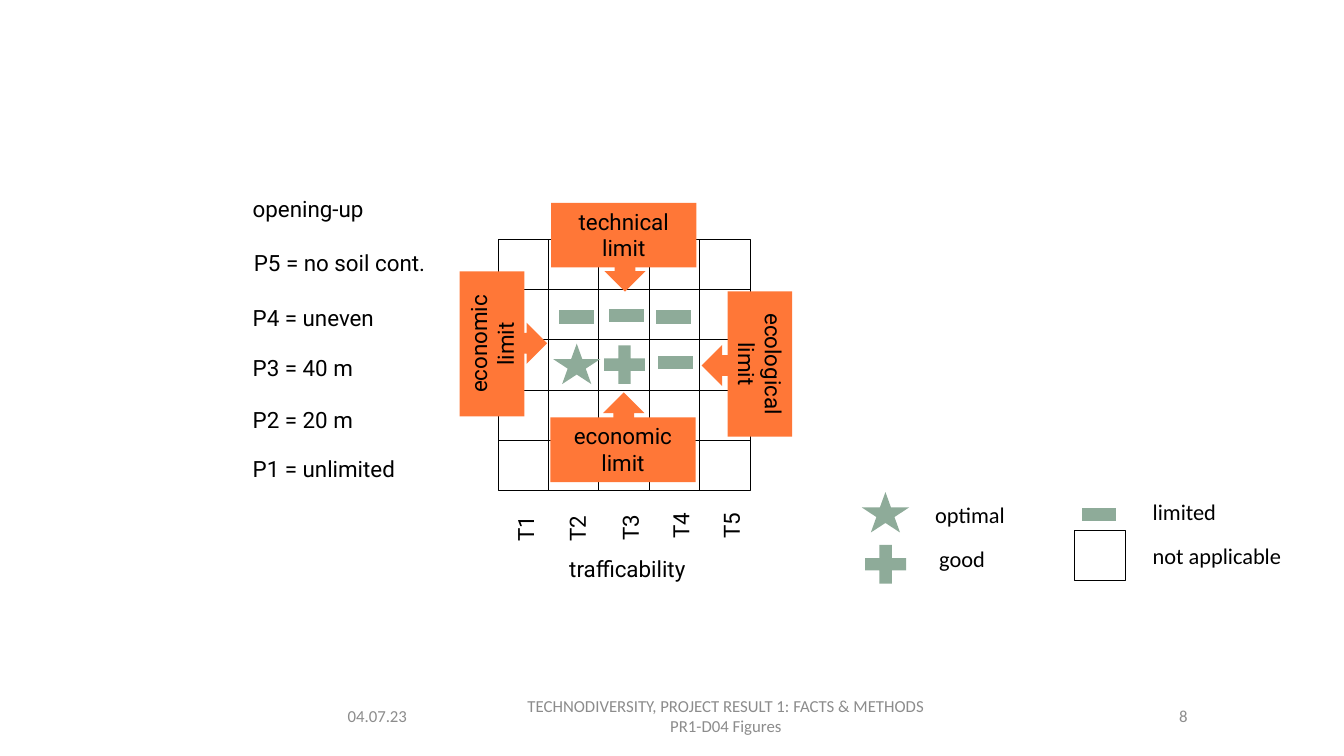
from dataclasses import dataclass

from pptx import Presentation
from pptx.dml.color import RGBColor
from pptx.enum.shapes import MSO_SHAPE as Shape
from pptx.enum.text import MSO_ANCHOR as Anchor, PP_ALIGN as Align
from pptx.util import Cm, Pt


@dataclass(frozen=True)
class Theme:
    ink: RGBColor = RGBColor(0x00, 0x00, 0x00)
    muted: RGBColor = RGBColor(0x8C, 0x8C, 0x8C)
    limit: RGBColor = RGBColor(0xFF, 0x77, 0x37)
    rating: RGBColor = RGBColor(0x8E, 0xAB, 0x99)
    figure_font: str = "Roboto"
    plain_font: str = "Calibri"
    body: float = 16
    small: float = 12
    hairline: float = 0.5


CELL = 1.27
GRID_LEFT, GRID_TOP, GRID_SIZE = 12.55, 6.02, 5
LABEL_HEIGHT = 0.94
ARROW_SIZE = (2.08, 2.92)
BANNER_SIZE = (3.66, 1.63)
STAR, PLUS, MINUS = Shape.STAR_5_POINT, Shape.MATH_PLUS, Shape.MATH_MINUS
MARK_SIZES = {STAR: (1.19, 1.02), PLUS: (1.4, 1.32), MINUS: (1.19, 1.4)}

# text, left, top, width
ROW_LABELS = [
    ("opening-up", 6.12, 4.8, 5.61),
    ("P5 = no soil cont.", 6.15, 6.15, 7.19),
    ("P4 = uneven", 6.12, 7.54, 3.68),
    ("P3 = 40 m", 6.12, 8.81, 5.28),
    ("P2 = 20 m", 6.12, 10.11, 5.28),
    ("P1 = unlimited", 6.12, 11.35, 5.28),
]
# text, left, top
COLUMN_LABELS = [
    ("T1", 12.57, 12.75),
    ("T2", 13.87, 12.75),
    ("T3", 15.21, 12.73),
    ("T4", 16.48, 12.67),
    ("T5", 17.75, 12.67),
]
# lines, arrow position and rotation, banner position and rotation
LIMITS = [
    (["economic limit"], (11.71, 7.19), 0, (10.57, 7.85), 270),
    (["economic", "limit"], (14.68, 9.47), 270, (13.87, 10.52), 0),
    (["technical", "limit"], (14.71, 4.85), 90, (13.89, 5.11), 0),
    (["ecological", "limit"], (17.68, 7.75), 180, (17.32, 8.36), 90),
]
# kind, left, top
MARKS = [
    (STAR, 13.94, 8.66),
    (PLUS, 15.04, 8.53),
    (MINUS, 13.94, 7.29),
    (MINUS, 15.19, 7.26),
    (MINUS, 16.38, 7.29),
    (MINUS, 16.43, 8.43),
    (MINUS, 27.1, 12.27),
    (STAR, 21.72, 12.4),
    (PLUS, 21.62, 13.56),
]
LEGEND_LABELS = [
    ("optimal", 23.32, 12.5),
    ("good", 23.42, 13.61),
    ("limited", 28.8, 12.42),
    ("not applicable", 28.8, 13.54),
]
# lines, left, width, alignment
FOOTERS = [
    (["04.07.23"], 8.51, 3.4, Align.LEFT),
    (["TECHNODIVERSITY, PROJECT RESULT 1: FACTS & METHODS",
      "PR1-D04 Figures"], 12.34, 11.91, Align.CENTER),
    (["8"], 24.82, 5.36, Align.RIGHT),
]


class FigureSlide:
    def __init__(self, prs, theme):
        self.theme = theme
        self.shapes = prs.slides.add_slide(prs.slide_layouts[6]).shapes

    def set_text(self, sp, lines, font, size, color, align):
        tf = sp.text_frame
        tf.word_wrap = True
        for i, line in enumerate(lines):
            p = tf.paragraphs[0] if i == 0 else tf.add_paragraph()
            p.text = line
            p.alignment = align
            p.font.name = font
            p.font.size = Pt(size)
            p.font.color.rgb = color

    def label(self, text, left, top, width, font, align=Align.LEFT, rotation=0):
        sp = self.shapes.add_textbox(Cm(left), Cm(top), Cm(width), Cm(LABEL_HEIGHT))
        sp.rotation = rotation
        self.set_text(sp, [text], font, self.theme.body, self.theme.ink, align)

    def footer(self, lines, left, width, align):
        sp = self.shapes.add_textbox(Cm(left), Cm(17.53), Cm(width), Cm(1.02))
        sp.text_frame.vertical_anchor = Anchor.MIDDLE
        self.set_text(sp, lines, self.theme.plain_font, self.theme.small,
                      self.theme.muted, align)

    def solid(self, kind, position, size, color, rotation=0):
        sp = self.shapes.add_shape(kind, *map(Cm, position + size))
        sp.shadow.inherit = False
        sp.fill.solid()
        sp.fill.fore_color.rgb = color
        sp.line.fill.background()
        sp.rotation = rotation
        return sp

    def cell(self, left, top):
        sp = self.shapes.add_shape(Shape.RECTANGLE, Cm(left), Cm(top), Cm(CELL), Cm(CELL))
        sp.shadow.inherit = False
        sp.fill.background()
        sp.line.color.rgb = self.theme.ink
        sp.line.width = Pt(self.theme.hairline)

    def limit(self, lines, arrow_at, arrow_turn, banner_at, banner_turn):
        """Add an arrow callout with a text banner over its box."""
        color = self.theme.limit
        self.solid(Shape.RIGHT_ARROW_CALLOUT, arrow_at, ARROW_SIZE, color, arrow_turn)
        sp = self.solid(Shape.RECTANGLE, banner_at, BANNER_SIZE, color, banner_turn)
        sp.text_frame.vertical_anchor = Anchor.TOP
        self.set_text(sp, lines, self.theme.figure_font, self.theme.body,
                      self.theme.ink, Align.CENTER)

    def mark(self, kind, left, top):
        self.solid(kind, (left, top), MARK_SIZES[kind], self.theme.rating)


def main():
    prs = Presentation()
    prs.slide_width, prs.slide_height = Cm(33.87), Cm(19.05)
    theme = Theme()
    s = FigureSlide(prs, theme)

    for footer in FOOTERS:
        s.footer(*footer)
    for row in range(GRID_SIZE):
        for column in range(GRID_SIZE):
            s.cell(GRID_LEFT + column * CELL, GRID_TOP + row * CELL)

    s.label("trafficability", 13.51, 13.87, 4.6, theme.figure_font, Align.CENTER)
    for text, left, top in COLUMN_LABELS:
        s.label(text, left, top, 1.35, theme.figure_font, rotation=270)
    for row_label in ROW_LABELS:
        s.label(*row_label, theme.figure_font)

    for limit in LIMITS:
        s.limit(*limit)
    for mark in MARKS:
        s.mark(*mark)

    s.cell(27.08, 13.36)
    for text, left, top in LEGEND_LABELS:
        s.label(text, left, top, 3.89, theme.plain_font)

    prs.save("out.pptx")


if __name__ == "__main__":
    main()
